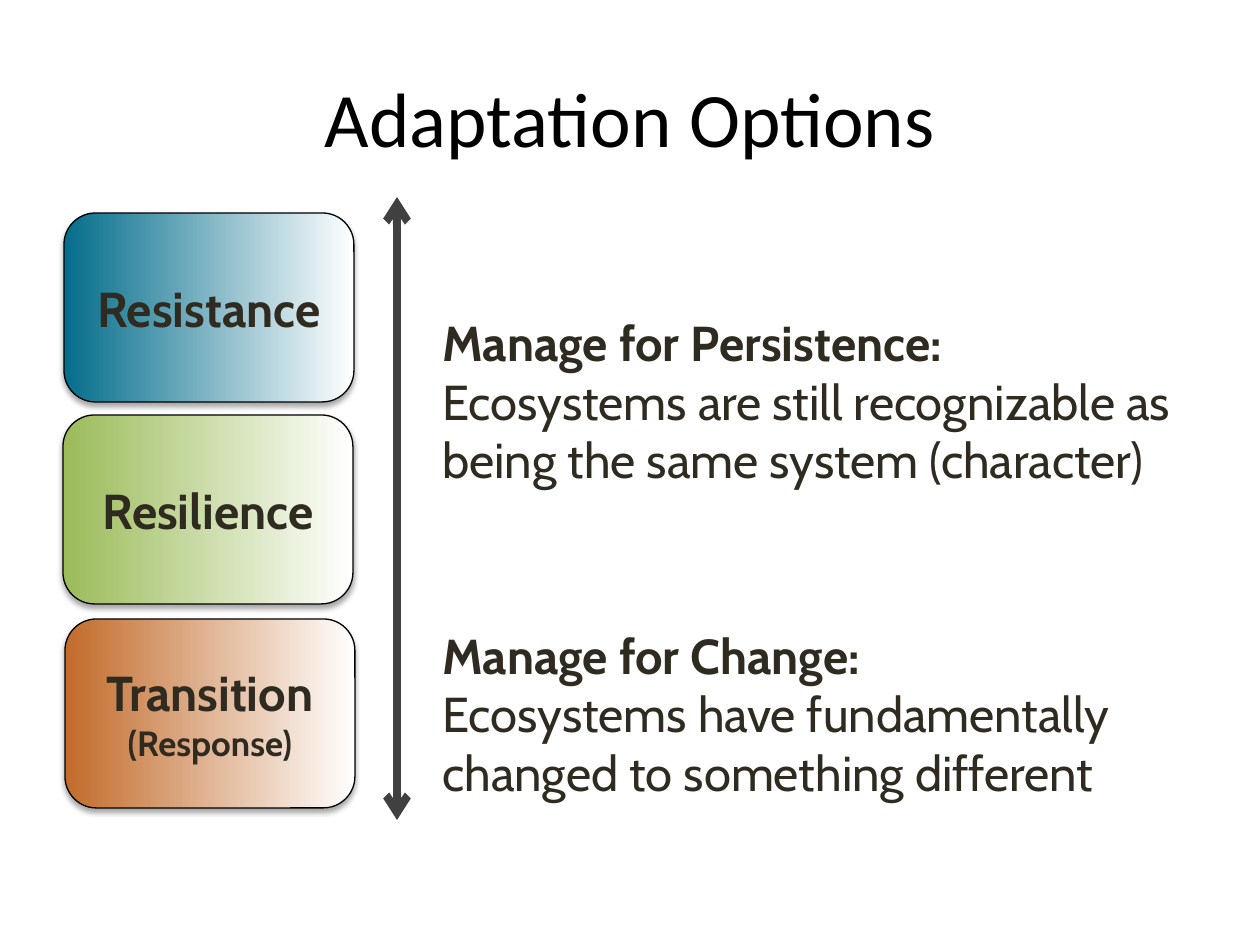
from dataclasses import dataclass
from lxml.etree import SubElement
from pptx import Presentation
from pptx.dml.color import RGBColor
from pptx.enum.shapes import MSO_CONNECTOR, MSO_SHAPE
from pptx.enum.text import MSO_ANCHOR, PP_ALIGN
from pptx.oxml.ns import qn
from pptx.util import Pt


@dataclass(frozen=True)
class Theme:
    title_font: str = "Calibri"
    body_font: str = "Cabin"
    black: str = "000000"
    white: str = "FFFFFF"
    ink: str = "2F2B20"
    arrow: str = "404040"
    title: int = 44
    body: int = 28
    small: int = 20


T = Theme()
TITLE = "Adaptation Options"
OPTIONS = [
    (64, 213, "046D8B", [("Resistance", T.body)]),
    (63, 415, "9BBB59", [("Resilience", T.body)]),
    (65, 619, "C26B2B", [("Transition", T.body), ("(Response)", T.small)]),
]
GOALS = [
    (306, "Manage for Persistence:",
     "Ecosystems are still recognizable as being the same system (character)"),
    (619, "Manage for Change:",
     "Ecosystems have fundamentally changed to something different"),
]
BOX_W, BOX_H = 290, 189
GOAL_X, GOAL_W, GOAL_H = 430, 767, 190
ARROW_X, ARROW_TOP, ARROW_BOTTOM = 397, 197, 820


def px(n):
    return round(n * 914400 / 126)


def rgb(value):
    return RGBColor.from_string(value)


def write(tf, i, text, size=T.body, font=T.body_font, color=T.ink,
          bold=False, align=PP_ALIGN.LEFT):
    p = tf.add_paragraph() if i else tf.paragraphs[0]
    p.alignment = align
    r = p.add_run()
    r.text = text
    r.font.name, r.font.size, r.font.bold = font, Pt(size), bold
    r.font.color.rgb = rgb(color)


def text_frame(s, x, y, w, h, anchor=MSO_ANCHOR.TOP):
    tf = s.shapes.add_textbox(px(x), px(y), px(w), px(h)).text_frame
    tf.word_wrap = True
    tf.vertical_anchor = anchor
    return tf


def add_shadow(sp):
    sp.shadow.inherit = False
    effects = sp._element.spPr.find(qn("a:effectLst"))
    shadow = SubElement(effects, qn("a:outerShdw"), blurRad=str(Pt(3.1)),
                        dist=str(Pt(1.8)), dir="5400000", rotWithShape="0")
    color = SubElement(shadow, qn("a:srgbClr"), val=T.black)
    SubElement(color, qn("a:alpha"), val="35000")


def add_option(s, x, y, color, lines):
    sp = s.shapes.add_shape(MSO_SHAPE.ROUNDED_RECTANGLE,
                            px(x), px(y), px(BOX_W), px(BOX_H))
    sp.fill.gradient()
    sp.fill.gradient_angle = 0
    for stop, value, position in zip(sp.fill.gradient_stops, (color, T.white), (0, 1)):
        stop.color.rgb = rgb(value)
        stop.position = position
    sp.line.color.rgb = rgb(T.black)
    sp.line.width = Pt(0.75)
    add_shadow(sp)
    tf = sp.text_frame
    tf.word_wrap = True
    tf.vertical_anchor = MSO_ANCHOR.MIDDLE
    for i, (text, size) in enumerate(lines):
        write(tf, i, text, size=size, bold=True, align=PP_ALIGN.CENTER)


def add_arrow(s):
    c = s.shapes.add_connector(MSO_CONNECTOR.STRAIGHT, px(ARROW_X), px(ARROW_TOP),
                               px(ARROW_X), px(ARROW_BOTTOM))
    c.line.color.rgb = rgb(T.arrow)
    c.line.width = Pt(4.5)
    ln = c.line._get_or_add_ln()
    for end in ("a:headEnd", "a:tailEnd"):
        SubElement(ln, qn(end), type="arrow")
    SubElement(c._element.spPr, qn("a:effectLst"))


def main():
    prs = Presentation()
    prs.slide_width, prs.slide_height = px(1260), px(945)
    s = prs.slides.add_slide(prs.slide_layouts[6])
    tf = text_frame(s, 63, 38, 1134, 157, MSO_ANCHOR.MIDDLE)
    write(tf, 0, TITLE, size=T.title, font=T.title_font, color=T.black,
          align=PP_ALIGN.CENTER)
    for option in OPTIONS:
        add_option(s, *option)
    add_arrow(s)
    for y, heading, detail in GOALS:
        tf = text_frame(s, GOAL_X, y, GOAL_W, GOAL_H)
        write(tf, 0, heading, bold=True)
        write(tf, 1, detail)
    prs.save("out.pptx")


if __name__ == "__main__":
    main()
